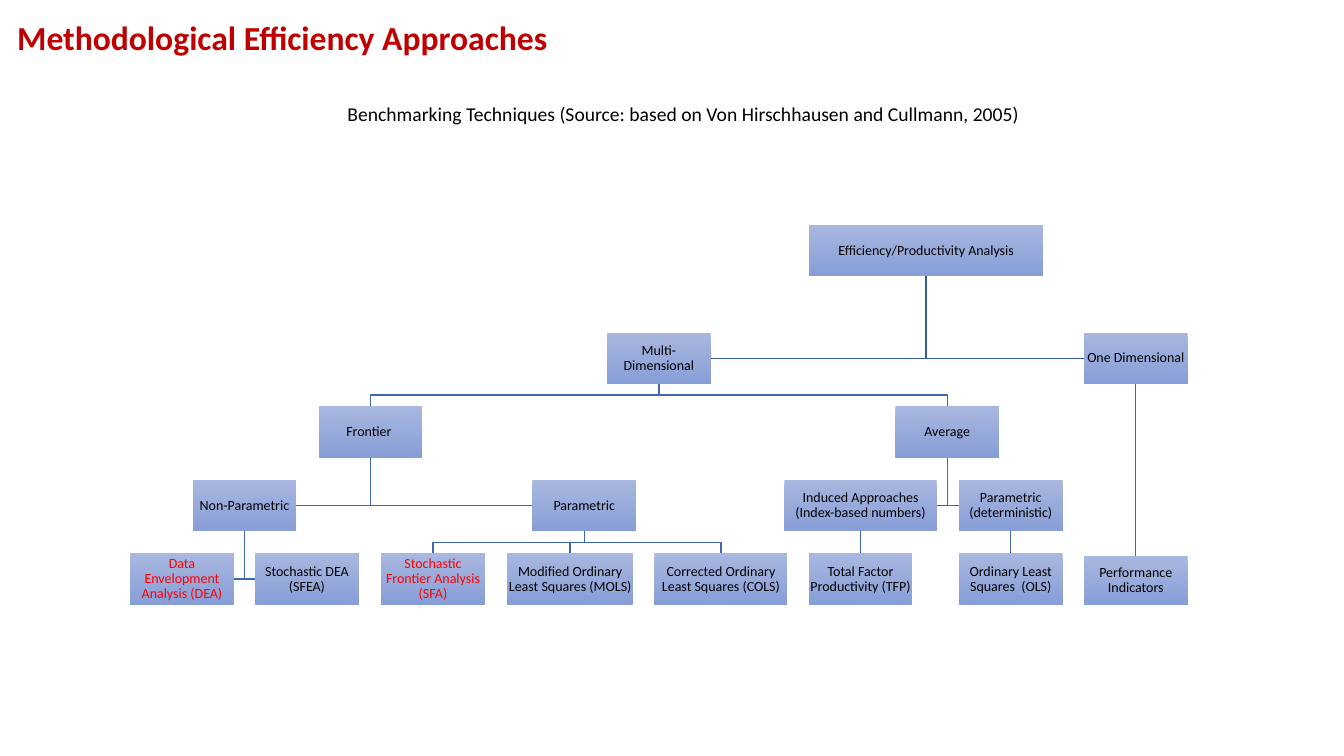
from dataclasses import dataclass

from lxml import etree
from pptx import Presentation
from pptx.dml.color import RGBColor
from pptx.enum.shapes import MSO_CONNECTOR, MSO_SHAPE
from pptx.enum.text import MSO_ANCHOR, PP_ALIGN
from pptx.oxml.ns import qn
from pptx.util import Inches, Pt

RECT = MSO_SHAPE.RECTANGLE
STRAIGHT = MSO_CONNECTOR.STRAIGHT
MIDDLE, BOTTOM = MSO_ANCHOR.MIDDLE, MSO_ANCHOR.BOTTOM
LEFT, CENTER = PP_ALIGN.LEFT, PP_ALIGN.CENTER

FONT = "Calibri"
BLACK, RED, TITLE = "000000", "FF0000", "C00000"
LINE, ROOT_LINE = "3E67B2", "365B9D"
LIGHT, DARK = "A8B7DF", "889ED7"

WIDE, TALL = 1.03, 0.51     # usual node size
ROWS = [0] + [1.07 + 0.73 * n for n in range(4)]
SIDE, DROP = "side", "drop"  # link enters a node at its side or top


@dataclass
class Node:
    text: str
    x: float        # left edge, from the left of the tree
    row: int
    boss: str = ""
    link: str = SIDE
    width: float = WIDE
    tall: float = TALL
    ink: str = BLACK

    @property
    def top(self):
        return self.bottom - self.tall

    @property
    def bottom(self):
        return ROWS[self.row] + TALL

    @property
    def mid(self):
        return self.x + self.width / 2


ROOT = "Efficiency/Productivity Analysis"
MULTI, ONE = "Multi-Dimensional", "One Dimensional"
FRONT, MEAN = "Frontier ", "Average"
FREE, PARAM = "Non-Parametric", "Parametric"
INDEX = "Induced Approaches (Index-based numbers)"
FIXED = "Parametric (deterministic)"

NODES = [
    Node(ROOT, 6.73, 0, width=2.33),
    Node(MULTI, 4.73, 1, ROOT),
    Node(ONE, 9.46, 1, ROOT),
    Node(FRONT, 1.87, 2, MULTI, DROP),
    Node(MEAN, 7.59, 2, MULTI, DROP),
    Node(FREE, 0.62, 3, FRONT),
    Node(PARAM, 3.99, 3, FRONT),
    Node(INDEX, 6.49, 3, MEAN, width=1.51),
    Node(FIXED, 8.22, 3, MEAN),
    Node("Data Envelopment Analysis (DEA)", 0, 4, FREE, ink=RED),
    Node("Stochastic DEA (SFEA)", 1.24, 4, FREE),
    Node("Stochastic Frontier Analysis (SFA)", 2.49, 4, PARAM, DROP, ink=RED),
    Node("Modified Ordinary Least Squares (MOLS)", 3.74, 4, PARAM, DROP, 1.25),
    Node("Corrected Ordinary Least Squares (COLS)", 5.2, 4, PARAM, DROP, 1.32),
    Node("Total Factor Productivity (TFP)", 6.73, 4, INDEX, DROP),
    Node("Ordinary Least Squares  (OLS)", 8.22, 4, FIXED, DROP),
    Node("Performance Indicators", 9.46, 4, ONE, DROP, tall=0.48),
]


def rgb(code):
    return RGBColor.from_string(code)


def write(frame, text, size, ink, align, bold=False):
    frame.word_wrap = True
    para = frame.paragraphs[0]
    para.alignment = align
    para.line_spacing = 0.9
    run = para.add_run()
    run.text = text
    font = run.font
    font.name, font.size, font.bold = FONT, Pt(size), bold
    font.color.rgb = rgb(ink)


def add_title(slide, x, y, width, height):
    title = slide.shapes.title
    title.left, title.top = Inches(x), Inches(y)
    title.width, title.height = Inches(width), Inches(height)
    title.text_frame.vertical_anchor = BOTTOM
    write(title.text_frame, "Methodological Efficiency Approaches",
          24, TITLE, LEFT, True)


def add_source(slide, x, y, width, height):
    box = slide.shapes.add_textbox(
        Inches(x), Inches(y), Inches(width), Inches(height))
    write(box.text_frame, "Benchmarking Techniques (Source: based on "
          "Von Hirschhausen and Cullmann, 2005)", 14, BLACK, CENTER)


def add_link(slide, x, y, boss, node):
    start = (boss.mid, boss.bottom)
    if node.link == SIDE:
        level = node.top + node.tall / 2
        edge = node.x if node.mid > boss.mid else node.x + node.width
        route = [start, (boss.mid, level), (edge, level)]
    elif abs(node.mid - boss.mid) < 0.02:
        route = [start, (boss.mid, node.top)]
    else:
        level = (boss.bottom + node.top) / 2
        route = [start, (boss.mid, level), (node.mid, level),
                 (node.mid, node.top)]
    points = [(Inches(x + a), Inches(y + b)) for a, b in route]

    if len(points) == 2:
        line = slide.shapes.add_connector(STRAIGHT, *points[0], *points[1])
        etree.SubElement(line._element.spPr, qn("a:effectLst"))
    else:
        path_maker = slide.shapes.build_freeform(*points[0])
        path_maker.add_line_segments(points[1:], close=False)
        line = path_maker.convert_to_shape()
        line.fill.background()
        line.shadow.inherit = False
    line.line.color.rgb = rgb(ROOT_LINE if boss.text == ROOT else LINE)
    line.line.width = Pt(1)


def add_node(slide, x, y, node):
    box = slide.shapes.add_shape(
        RECT, Inches(x + node.x), Inches(y + node.top),
        Inches(node.width), Inches(node.tall))
    box.shadow.inherit = False
    box.line.fill.background()
    box.fill.gradient()
    box.fill.gradient_angle = 270
    for stop, code in zip(box.fill.gradient_stops, (LIGHT, DARK)):
        stop.color.rgb = rgb(code)
    frame = box.text_frame
    frame.margin_left = frame.margin_right = Inches(0.01)
    frame.margin_top = frame.margin_bottom = Inches(0.01)
    frame.vertical_anchor = MIDDLE
    write(frame, node.text, 10, node.ink, CENTER)


def add_tree(slide, x, y):
    named = {node.text: node for node in NODES}
    # Links lie behind the nodes
    for node in NODES:
        if node.boss:
            add_link(slide, x, y, named[node.boss], node)
    for node in NODES:
        add_node(slide, x, y, node)


def main():
    deck = Presentation()
    deck.slide_width, deck.slide_height = Inches(13.33), Inches(7.5)
    slide = deck.slides.add_slide(deck.slide_layouts[5])
    add_title(slide, 0.07, 0.24, 13.4, 0.38)
    add_source(slide, 0.22, 0.99, 13.12, 6.43)
    add_tree(slide, 1.29, 2.23)
    deck.save("out.pptx")


if __name__ == "__main__":
    main()
